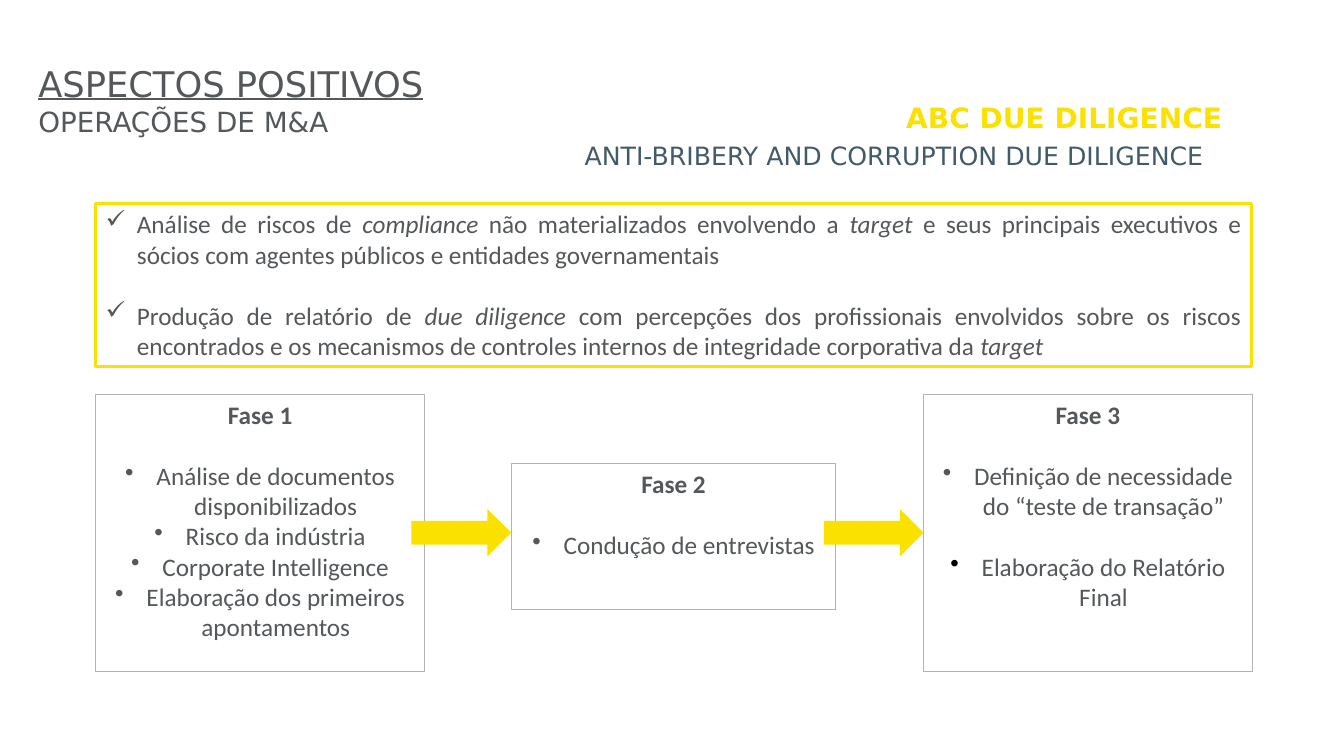
from lxml import etree
from pptx import Presentation
from pptx.dml.color import RGBColor
from pptx.enum.shapes import MSO_SHAPE
from pptx.enum.text import MSO_ANCHOR, PP_ALIGN
from pptx.oxml.ns import qn
from pptx.util import Inches, Pt

RECTANGLE, ARROW = MSO_SHAPE.RECTANGLE, MSO_SHAPE.RIGHT_ARROW
LEFT, CENTER, JUSTIFY = PP_ALIGN.LEFT, PP_ALIGN.CENTER, PP_ALIGN.JUSTIFY
TOP, MIDDLE = MSO_ANCHOR.TOP, MSO_ANCHOR.MIDDLE

# Content
TITLE, SUBTITLE = "ASPECTOS POSITIVOS", "OPERAÇÕES DE M&A"
TOPIC = "ABC DUE DILIGENCE"
TOPIC_DETAIL = "ANTI-BRIBERY AND CORRUPTION DUE DILIGENCE"
# Each point alternates regular and italic text
POINTS = [
    ["Análise de riscos de ", "compliance", " não materializados envolvendo a ", "target",
     " e seus principais executivos e sócios com agentes públicos e entidades governamentais"],
    ["Produção de relatório de ", "due diligence ",
     "com percepções dos profissionais envolvidos sobre os riscos encontrados e os "
     "mecanismos de controles internos de integridade corporativa da ", "target"],
]
# Name, box (left, top, width, height), groups of steps
PHASES = [
    ("Fase 1", (0.95, 3.91, 3.26, 2.75),
     [["Análise de documentos disponibilizados", "Risco da indústria",
       "Corporate Intelligence", "Elaboração dos primeiros apontamentos"]]),
    ("Fase 2", (5.07, 4.6, 3.22, 1.45), [["Condução de entrevistas"]]),
    ("Fase 3", (9.16, 3.91, 3.26, 2.75),
     [["Definição de necessidade do “teste de transação”"],
      ["Elaboração do Relatório Final"]]),
]
BLACK_BULLET_STEP = "Elaboração do Relatório Final"
ARROW_TOP, ARROW_WIDTH, ARROW_HEIGHT = 5.05, 0.99, 0.47

THEME = {
    "text": "54585A", "accent": "FAE100", "detail": "435B67", "border": "B2B4B2",
    "black": "000000", "heading_font": "DejaVu Sans", "body_font": "Calibri",
    "title": 25.2, "subtitle": 19.8, "topic": 20, "body": 18,
    "group_gap": 22, "indent": 0.31,
}
HEADING = {"name": THEME["heading_font"], "bold": False}
BODY = {"name": THEME["body_font"], "size": Pt(THEME["body"]), "bold": False}


def add_span(para, text, style, color="text"):
    span = para.add_run()
    span.text = text
    for name, value in style.items():
        setattr(span.font, name, value)
    span.font.color.rgb = RGBColor.from_string(THEME[color])


def add_bullet(para, symbol, color="text"):
    properties = para._p.get_or_add_pPr()
    indent = Inches(THEME["indent"])
    properties.set("marL", str(indent))
    properties.set("indent", str(-indent))
    bullet_color = etree.SubElement(properties, qn("a:buClr"))
    etree.SubElement(bullet_color, qn("a:srgbClr")).set("val", THEME[color])
    etree.SubElement(properties, qn("a:buChar")).set("char", symbol)


def add_block(page, kind, place, fill=None, line=None, line_width=0.75):
    block = page.shapes.add_shape(kind, *map(Inches, place))
    block.shadow.inherit = False
    if fill:
        block.fill.solid()
        block.fill.fore_color.rgb = RGBColor.from_string(THEME[fill])
    else:
        block.fill.background()
    if line:
        block.line.color.rgb = RGBColor.from_string(THEME[line])
        block.line.width = Pt(line_width)
    else:
        block.line.fill.background()
    block.text_frame.word_wrap = True
    block.text_frame.vertical_anchor = TOP
    return block


def add_title(page):
    box = page.shapes.title
    box.left, box.top, box.width, box.height = map(Inches, (0.38, 0.6, 12.6, 0.79))
    frame = box.text_frame
    frame.margin_left = frame.margin_right = frame.margin_top = frame.margin_bottom = 0
    frame.word_wrap = True
    frame.vertical_anchor = MIDDLE
    para = frame.paragraphs[0]
    para.alignment, para.line_spacing, para.space_before = LEFT, 1.0, Pt(0)
    add_span(para, TITLE, {**HEADING, "size": Pt(THEME["title"]), "underline": True})
    para.add_line_break()
    add_span(para, SUBTITLE, {**HEADING, "size": Pt(THEME["subtitle"])})


def add_label(page, text, place, style, color):
    box = page.shapes.add_textbox(*map(Inches, place))
    box.text_frame.word_wrap = True
    add_span(box.text_frame.paragraphs[0], text, {**HEADING, **style}, color)


def add_points(page):
    box = add_block(page, RECTANGLE, (0.95, 2.02, 11.46, 1.62), line="accent", line_width=2)
    frame = box.text_frame
    for number, point in enumerate(POINTS):
        para = frame.add_paragraph() if number else frame.paragraphs[0]
        para.alignment = JUSTIFY
        add_bullet(para, "✓")
        if number:
            para.space_before = Pt(THEME["group_gap"])
        for part, text in enumerate(point):
            add_span(para, text, {**BODY, "italic": part % 2 == 1})


def add_phase(page, name, place, groups):
    frame = add_block(page, RECTANGLE, place, line="border").text_frame
    heading = frame.paragraphs[0]
    heading.alignment = CENTER
    add_span(heading, name, {**BODY, "bold": True})
    for group in groups:
        for number, step in enumerate(group):
            para = frame.add_paragraph()
            para.alignment = CENTER
            add_bullet(para, "•", "black" if step == BLACK_BULLET_STEP else "text")
            para.space_before = Pt(0 if number else THEME["group_gap"])
            add_span(para, step, BODY)


def main():
    deck = Presentation()
    deck.slide_width, deck.slide_height = Inches(13.33), Inches(7.5)
    page = deck.slides.add_slide(deck.slide_layouts[5])

    # Headings
    add_title(page)
    add_label(page, TOPIC, (8.89, 0.95, 3.43, 0.44),
              {"size": Pt(THEME["topic"]), "bold": True}, "accent")
    add_label(page, TOPIC_DETAIL, (5.7, 1.34, 6.7, 0.4),
              {"size": Pt(THEME["body"])}, "detail")

    # Key points and phases
    add_points(page)
    for phase in PHASES:
        add_phase(page, *phase)

    # Arrows end at the left edge of the next phase
    for _, place, _ in PHASES[1:]:
        add_block(page, ARROW, (place[0] - ARROW_WIDTH, ARROW_TOP, ARROW_WIDTH, ARROW_HEIGHT),
                  fill="accent")

    deck.save("out.pptx")


if __name__ == "__main__":
    main()
